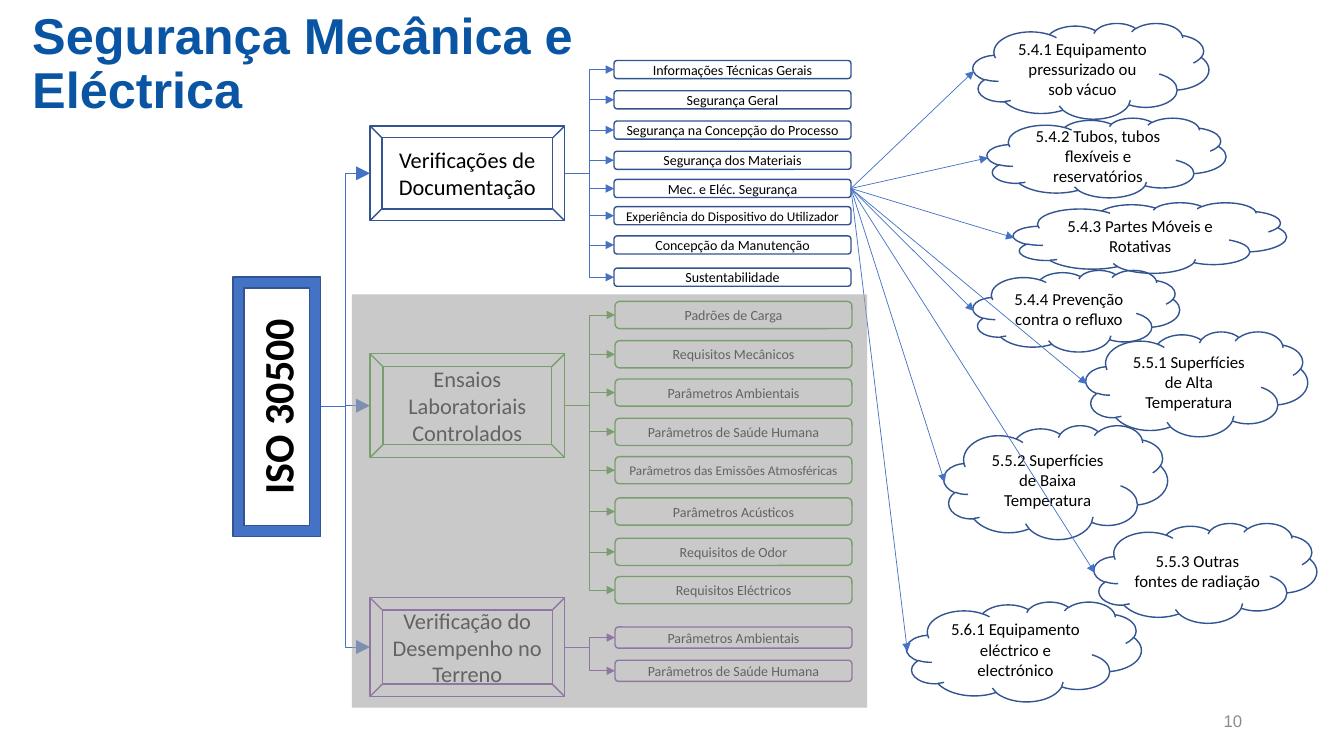
from pptx import Presentation
from pptx.util import Inches, Pt
from pptx.dml.color import RGBColor
from pptx.enum.shapes import MSO_SHAPE as Shape, MSO_CONNECTOR as Link
from pptx.enum.text import PP_ALIGN as Align, MSO_ANCHOR as Anchor
from pptx.oxml.ns import qn
from lxml.etree import SubElement

TITLE = RGBColor(0x0A, 0x55, 0xA3)
NAVY = RGBColor(0x32, 0x54, 0x91)
BLUE = RGBColor(0x44, 0x72, 0xC4)
GREEN = RGBColor(0x36, 0x94, 0x1C)
PURPLE = RGBColor(0x70, 0x30, 0xA0)
BLACK = RGBColor(0, 0, 0)
GRAY = RGBColor(0x8C, 0x8C, 0x8C)
VEIL = RGBColor(0xA5, 0xA5, 0xA5)

BRANCH_X, BRANCH_W = 3.67, 1.93
LEAF_W = 2.35
ROOT = (2.31, 2.75, 0.87, 2.57)
HUB = (8.44, 1.87)

BRANCHES = [
    ("Verificações de Documentação", 1.25, 0.94, NAVY, BLUE, 6.09, 0.18, [
        ("Informações Técnicas Gerais", 0.6),
        ("Segurança Geral", 0.9),
        ("Segurança na Concepção do Processo", 1.2),
        ("Segurança dos Materiais", 1.5),
        ("Mec. e Eléc. Segurança", 1.78),
        ("Experiência do Dispositivo do Utilizador", 2.05),
        ("Concepção da Manutenção", 2.34),
        ("Sustentabilidade", 2.66),
    ]),
    ("Ensaios Laboratoriais Controlados", 3.51, 1.03, GREEN, GREEN, 6.1, 0.27, [
        ("Padrões de Carga", 2.99),
        ("Requisitos Mecânicos", 3.38),
        ("Parâmetros Ambientais", 3.76),
        ("Parâmetros de Saúde Humana", 4.15),
        ("Parâmetros das Emissões Atmosféricas", 4.53),
        ("Parâmetros Acústicos", 4.94),
        ("Requisitos de Odor", 5.34),
        ("Requisitos Eléctricos", 5.72),
    ]),
    ("Verificação do Desempenho no Terreno", 5.93, 0.98, PURPLE, PURPLE, 6.1, 0.21, [
        ("Parâmetros Ambientais", 6.22),
        ("Parâmetros de Saúde Humana", 6.55),
    ]),
]

CLOUDS = [
    ("5.4.1 Equipamento pressurizado ou sob vácuo", 9.65, 0.23, 2.34, 0.95),
    ("5.4.2 Tubos, tubos flexíveis e reservatórios", 9.79, 1.17, 2.37, 0.79),
    ("5.4.3 Partes Móveis e Rotativas", 10.05, 2.01, 2.71, 0.7),
    ("5.4.4 Prevenção contra o refluxo", 9.65, 2.68, 2.05, 0.81),
    ("5.5.1 Superfícies de Alta Temperatura", 10.77, 3.29, 2.2, 1.04),
    ("5.5.2 Superfícies de Baixa Temperatura", 9.36, 4.22, 2.22, 1.13),
    ("5.5.3 Outras fontes de radiação", 10.85, 5.19, 2.21, 0.99),
    ("5.6.1 Equipamento eléctrico e electrónico", 8.99, 5.97, 2.33, 0.99),
]


def write(shape, text, size, color, align, font="Calibri", bold=False):
    frame = shape.text_frame
    frame.word_wrap = True
    frame.vertical_anchor = Anchor.MIDDLE
    frame.text = text
    par = frame.paragraphs[0]
    par.alignment = align
    par.font.name = font
    par.font.size = Pt(size)
    par.font.bold = bold
    par.font.color.rgb = color
    return frame


def add_text(slide, box, *style, **more):
    return write(slide.shapes.add_textbox(*map(Inches, box)), *style, **more)


def add_box(slide, kind, box, text, size, color, bold=False):
    shape = slide.shapes.add_shape(kind, *map(Inches, box))
    shape.shadow.inherit = False
    shape.fill.background()
    shape.line.color.rgb = color
    shape.line.width = Pt(1)
    write(shape, text, size, BLACK, Align.CENTER, bold=bold)
    return shape


def add_arrow(slide, kind, start, end, color, head="med"):
    line = slide.shapes.add_connector(kind, *map(Inches, (*start, *end)))
    line.line.color.rgb = color
    line.line.width = Pt(0.5)
    props = line._element.spPr
    SubElement(props.find(qn("a:ln")), qn("a:tailEnd"),
               type="triangle", w=head, len=head)
    SubElement(props, qn("a:effectLst"))


def add_root(slide):
    root = add_box(slide, Shape.FRAME, ROOT, "ISO 30500", 30, NAVY, True)
    root.fill.solid()
    root.fill.fore_color.rgb = BLUE
    root.text_frame._txBody.bodyPr.set("vert", "vert270")


def add_branch(slide, text, top, high, edge, color, left, tall, leaves):
    mid = top + high / 2
    add_box(slide, Shape.BEVEL, (BRANCH_X, top, BRANCH_W, high), text, 16, edge)
    x, y, wide, deep = ROOT
    add_arrow(slide, Link.ELBOW, (x + wide, y + deep / 2), (BRANCH_X, mid),
              BLUE, "lg")
    for label, y in leaves:
        add_arrow(slide, Link.ELBOW, (BRANCH_X + BRANCH_W, mid),
                  (left, y + tall / 2), color)
        size = 9.5 if len(label) > 35 else 10
        add_box(slide, Shape.ROUNDED_RECTANGLE, (left, y, LEAF_W, tall),
                label, size, edge)


def add_cloud(slide, text, x, y, wide, high):
    add_box(slide, Shape.CLOUD, (x, y, wide, high), text, 12, NAVY)
    add_arrow(slide, Link.STRAIGHT, HUB, (x + 0.01, y + high / 2), BLUE)


def add_veil(slide):
    veil = slide.shapes.add_shape(
        Shape.RECTANGLE, *map(Inches, (3.49, 2.92, 5.11, 4.1)))
    veil.shadow.inherit = False
    veil.line.fill.background()
    veil.fill.solid()
    veil.fill.fore_color.rgb = VEIL
    tint = veil._element.spPr.find(qn("a:solidFill"))[0]
    SubElement(tint, qn("a:alpha"), val="60000")


def main():
    deck = Presentation()
    deck.slide_width = Inches(13.33)
    deck.slide_height = Inches(7.5)
    slide = deck.slides.add_slide(deck.slide_layouts[6])
    frame = add_text(slide, (0.32, 0.15, 12.24, 0.99),
                     "Segurança Mecânica e\vEléctrica", 36, TITLE, Align.LEFT,
                     font="Arial", bold=True)
    frame.margin_left = frame.margin_right = 0
    frame.margin_top = frame.margin_bottom = 0
    frame.paragraphs[0].line_spacing = 0.9
    add_root(slide)
    for branch in BRANCHES:
        add_branch(slide, *branch)
    for cloud in CLOUDS:
        add_cloud(slide, *cloud)
    add_text(slide, (9.42, 6.95, 3, 0.4), "10", 12, GRAY, Align.RIGHT,
             font="Arial")
    add_veil(slide)
    deck.save("out.pptx")


if __name__ == "__main__":
    main()
